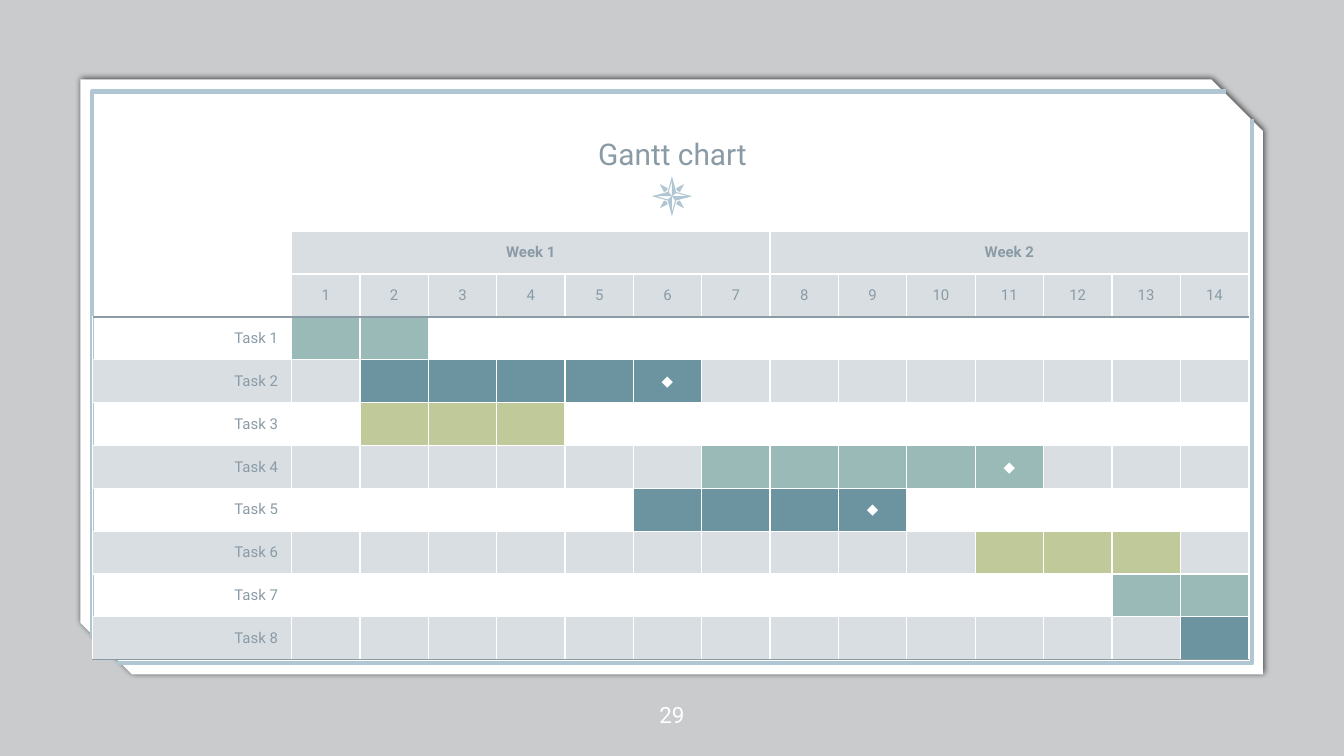
"""Build a slide with a two-week Gantt chart on a framed card."""
from lxml import etree
from pptx import Presentation
from pptx.dml.color import RGBColor
from pptx.enum.shapes import MSO_SHAPE
from pptx.enum.text import MSO_ANCHOR, PP_ALIGN
from pptx.oxml.ns import qn
from pptx.util import Cm, Pt

RECT, SNIP = MSO_SHAPE.RECTANGLE, MSO_SHAPE.SNIP_2_DIAG_RECTANGLE
MIDDLE, BOTTOM = MSO_ANCHOR.MIDDLE, MSO_ANCHOR.BOTTOM
CENTER, RIGHT = PP_ALIGN.CENTER, PP_ALIGN.RIGHT
FONT = "Roboto"
COLORS = {
    "ink": "040E11", "white": "FFFFFF", "black": "000000", "frame": "B0C6D3",
    "text": "8A9BA6", "band": "D8DEE2", "teal": "99BAB6", "blue": "6B93A0",
    "olive": "C0C99A",
}
DAYS = 14
WEEK = 7
HEADER_ROWS = 2
TASKS = [
    ("Task 1", 1, 2, "teal", None),
    ("Task 2", 2, 6, "blue", 6),
    ("Task 3", 2, 4, "olive", None),
    ("Task 4", 7, 11, "teal", 11),
    ("Task 5", 6, 9, "blue", 9),
    ("Task 6", 11, 13, "olive", None),
    ("Task 7", 13, 14, "teal", None),
    ("Task 8", 14, 14, "blue", None),
]


def rgb(name):
    return RGBColor.from_string(COLORS[name])


def write(tf, text, size=8, color="text", bold=False, align=CENTER):
    p = tf.paragraphs[0]
    p.alignment = align
    r = p.add_run()
    r.text = text
    r.font.name, r.font.size, r.font.bold = FONT, Pt(size), bold
    r.font.color.rgb = rgb(color)


def set_box(tf, anchor):
    tf.word_wrap = True
    tf.vertical_anchor = anchor
    tf.margin_left = tf.margin_right = tf.margin_top = tf.margin_bottom = 0


def paint(sp, color):
    sp.shadow.inherit = False
    sp.fill.solid()
    sp.fill.fore_color.rgb = rgb(color)
    sp.line.fill.background()


def add_alpha(parent, percent):
    etree.SubElement(parent, qn("a:alpha"), val=str(percent * 1000))


def add_backdrop(s, prs):
    sp = s.shapes.add_shape(RECT, 0, 0, prs.slide_width, prs.slide_height)
    paint(sp, "ink")
    add_alpha(sp.element.spPr.find(".//" + qn("a:srgbClr")), 21)


def add_card(s):
    sp = s.shapes.add_shape(SNIP, Cm(1.52), Cm(1.5), Cm(22.35), Cm(11.25))
    sp.adjustments[0], sp.adjustments[1] = 0, 0.087
    paint(sp, "white")
    effects = sp.element.spPr.find(qn("a:effectLst"))
    shadow = etree.SubElement(effects, qn("a:outerShdw"), blurRad=str(Pt(3.4)),
                              dist=str(Pt(0.8)), dir="0", rotWithShape="0")
    add_alpha(etree.SubElement(shadow, qn("a:srgbClr"), val=COLORS["black"]), 68)


def add_outline(s, contours, close=True):
    """Draw contours whose points are in centimetres."""
    first, *rest = [[(x * 100, y * 100) for x, y in c] for c in contours]
    builder = s.shapes.build_freeform(*first[0], scale=Cm(0.01))
    builder.add_line_segments(first[1:], close=close)
    for contour in rest:
        builder.move_to(*contour[0])
        builder.add_line_segments(contour[1:], close=close)
    return builder.convert_to_shape()


def add_bracket(s, points):
    sp = add_outline(s, [points], close=False)
    sp.shadow.inherit = False
    sp.fill.background()
    sp.line.color.rgb = rgb("frame")
    sp.line.width = Pt(2.25)


def add_compass(s, cx, cy):
    kite = [(0.23, 0.23), (0.15, 0.08), (0.1, 0.1), (0.08, 0.15)]
    for sx in (-1, 1):
        for sy in (-1, 1):
            points = [(cx + sx * x, cy + sy * y) for x, y in kite]
            paint(add_outline(s, [points]), "frame")
    star, blades = [], []
    spike, blade = [(0, -0.38), (0.08, -0.08)], [(0, -0.3), (0, 0), (-0.06, -0.08)]
    for _ in range(4):
        star += spike
        blades.append(blade)
        spike, blade = ([(-y, x) for x, y in c] for c in (spike, blade))
    contours = [[(cx + x, cy + y) for x, y in c] for c in [star] + blades]
    paint(add_outline(s, contours), "frame")


def set_borders(cell, **colors):
    """Set the L, R, T and B borders; None hides one."""
    tc_pr = cell._tc.get_or_add_tcPr()
    for i, side in enumerate("LRTB"):
        color = colors.get(side, "white")
        ln = etree.Element(qn("a:ln" + side), w=str(Pt(0.75)))
        if color:
            fill = etree.SubElement(ln, qn("a:solidFill"))
            etree.SubElement(fill, qn("a:srgbClr"), val=COLORS[color])
        else:
            etree.SubElement(ln, qn("a:noFill"))
        tc_pr.insert(i, ln)


def format_cell(cell, row, text="", fill=None, **style):
    cell.vertical_anchor = MIDDLE
    if fill:
        cell.fill.solid()
        cell.fill.fore_color.rgb = rgb(fill)
    else:
        cell.fill.background()
    if text:
        write(cell.text_frame, text, **style)
    else:
        etree.SubElement(cell.text_frame.paragraphs[0]._p,
                         qn("a:endParaRPr"), sz="800")
    sides = {}
    if row == HEADER_ROWS:
        sides["T"] = "text"
    if row in (HEADER_ROWS - 1, HEADER_ROWS + len(TASKS) - 1):
        sides["B"] = "text"
    if row < HEADER_ROWS and not fill:
        sides.update(L=None, T=None)
    set_borders(cell, **sides)


def add_gantt(s):
    rows = HEADER_ROWS + len(TASKS)
    label_w, days_w, row_h = 3.76, 18.1, 0.81
    table = s.shapes.add_table(rows, DAYS + 1, Cm(1.75), Cm(4.37),
                               Cm(label_w + days_w), Cm(row_h * rows)).table
    table.first_row = table.horz_banding = False
    for i, col in enumerate(table.columns):
        col.width = Cm(days_w / DAYS) if i else Cm(label_w)
    for row in table.rows:
        row.height = Cm(row_h)
    for row in range(HEADER_ROWS):
        format_cell(table.cell(row, 0), row)
    for day in range(1, DAYS + 1):
        week, offset = divmod(day - 1, WEEK)
        label = "" if offset else f"Week {week + 1}"
        format_cell(table.cell(0, day), 0, label, "band", bold=True)
        format_cell(table.cell(1, day), 1, str(day), "band")
    for start in range(1, DAYS + 1, WEEK):
        table.cell(0, start).merge(table.cell(0, start + WEEK - 1))
    for i, (name, start, end, color, milestone) in enumerate(TASKS):
        row = HEADER_ROWS + i
        band = "band" if i % 2 else None
        format_cell(table.cell(row, 0), row, name, band, align=RIGHT)
        for day in range(1, DAYS + 1):
            mark = "◆" if day == milestone else ""
            fill = color if start <= day <= end else band
            format_cell(table.cell(row, day), row, mark, fill, color="white")


def add_title(s, text):
    title = s.shapes.title
    title.left, title.top, title.width, title.height = (
        Cm(2.79), Cm(1.73), Cm(19.84), Cm(1.52))
    set_box(title.text_frame, BOTTOM)
    write(title.text_frame, text, size=16)
    title.element.getparent().append(title.element)


def add_page_number(s, text):
    tf = s.shapes.add_textbox(Cm(11.94), Cm(12.75), Cm(1.52), Cm(1.52)).text_frame
    set_box(tf, MIDDLE)
    write(tf, text, size=12, color="white")


def main():
    prs = Presentation()
    prs.slide_width, prs.slide_height = Cm(25.4), Cm(14.29)
    s = prs.slides.add_slide(prs.slide_layouts[5])
    add_backdrop(s, prs)
    add_card(s)
    add_bracket(s, [(1.74, 12.02), (1.74, 1.73), (23.18, 1.73)])
    add_bracket(s, [(23.66, 2.25), (23.66, 12.54), (2.22, 12.54)])
    add_compass(s, 12.7, 3.71)
    add_title(s, "Gantt chart")
    add_page_number(s, "29")
    add_gantt(s)
    prs.save("out.pptx")


if __name__ == "__main__":
    main()
